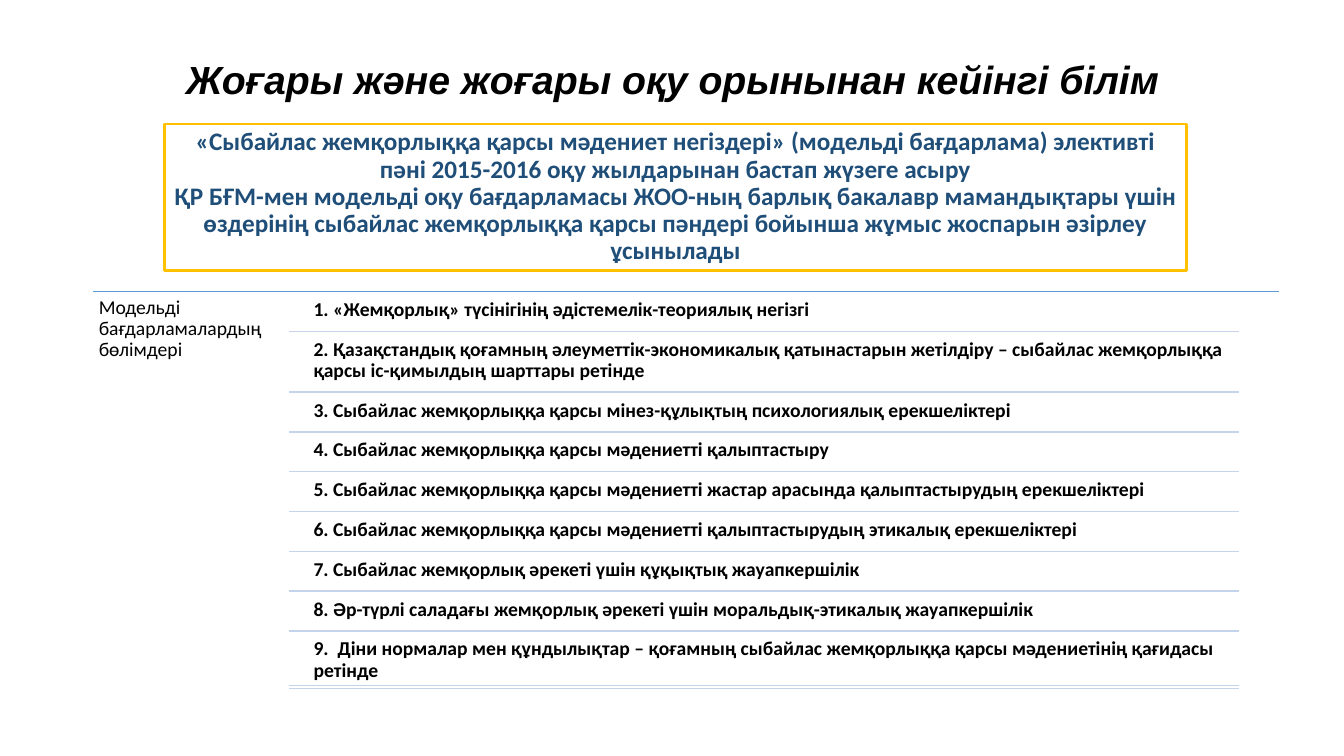
from lxml.etree import SubElement
from pptx import Presentation
from pptx.dml.color import RGBColor
from pptx.enum.shapes import MSO_CONNECTOR, MSO_SHAPE
from pptx.enum.text import MSO_ANCHOR, PP_ALIGN
from pptx.oxml.ns import qn
from pptx.util import Inches, Pt


class Theme:
    black = RGBColor.from_string("000000")
    navy = RGBColor.from_string("1F4E79")
    gold = RGBColor.from_string("FFC000")
    blue = RGBColor.from_string("5B9BD5")
    pale_blue = RGBColor.from_string("C4D5EB")
    heading_font = "Arial"
    body_font = "Calibri"
    title_size = Pt(28)
    summary_size = Pt(18)
    section_size = Pt(14)


TITLE = "Жоғары және жоғары оқу орынынан кейінгі білім"
SUMMARY = [
    "«Сыбайлас жемқорлыққа қарсы мәдениет негіздері» (модельді бағдарлама) элективті "
    "пәні 2015-2016 оқу жылдарынан бастап жүзеге асыру",
    "ҚР БҒМ-мен модельді оқу бағдарламасы ЖОО-ның барлық бакалавр мамандықтары үшін "
    "өздерінің сыбайлас жемқорлыққа қарсы пәндері бойынша жұмыс жоспарын әзірлеу ұсынылады",
]
SECTIONS_LABEL = "Модельді бағдарламалардың бөлімдері"
SECTIONS = [
    "1. «Жемқорлық» түсінігінің әдістемелік-теориялық негізгі",
    "2. Қазақстандық қоғамның әлеуметтік-экономикалық қатынастарын жетілдіру – "
    "сыбайлас жемқорлыққа қарсы іс-қимылдың шарттары ретінде",
    "3. Сыбайлас жемқорлыққа қарсы мінез-құлықтың психологиялық ерекшеліктері",
    "4. Сыбайлас жемқорлыққа қарсы мәдениетті қалыптастыру",
    "5. Сыбайлас жемқорлыққа қарсы мәдениетті жастар арасында қалыптастырудың ерекшеліктері",
    "6. Сыбайлас жемқорлыққа қарсы мәдениетті қалыптастырудың этикалық ерекшеліктері",
    "7. Сыбайлас жемқорлық әрекеті үшін құқықтық жауапкершілік",
    "8. Әр-түрлі саладағы жемқорлық әрекеті үшін моральдық-этикалық жауапкершілік",
    "9.  Діни нормалар мен құндылықтар – қоғамның сыбайлас жемқорлыққа қарсы "
    "мәдениетінің қағидасы ретінде",
]


def write(shape, lines, size, color=Theme.black, font=Theme.body_font, bold=True,
          italic=False, align=PP_ALIGN.LEFT, anchor=MSO_ANCHOR.TOP, inset=0.06):
    """Fill a shape with one paragraph per line, all in the same style."""
    frame = shape.text_frame
    frame.word_wrap = True
    frame.vertical_anchor = anchor
    frame.margin_left = frame.margin_right = Inches(inset)
    frame.margin_top = frame.margin_bottom = Inches(min(inset, 0.06))
    frame.text = "\n".join(lines)
    for paragraph in frame.paragraphs:
        paragraph.alignment = align
        paragraph.line_spacing = 0.9
        paragraph.font.name = font
        paragraph.font.size = size
        paragraph.font.bold = bold
        paragraph.font.italic = italic
        paragraph.font.color.rgb = color


def add_rule(left, right, y, color):
    """Draw a horizontal dividing line."""
    rule = slide.shapes.add_connector(
        MSO_CONNECTOR.STRAIGHT, Inches(left), Inches(y), Inches(right), Inches(y))
    rule.line.color.rgb = color
    rule.line.width = Pt(1)
    SubElement(rule._element.spPr, qn("a:effectLst"))


prs = Presentation()
prs.slide_width = Inches(13.33)
prs.slide_height = Inches(7.5)
slide = prs.slides.add_slide(prs.slide_layouts[6])

# Title and summary
title = slide.shapes.add_textbox(Inches(0.92), Inches(0.4), Inches(11.5), Inches(0.83))
write(title, [TITLE], Theme.title_size, font=Theme.heading_font, italic=True,
      align=PP_ALIGN.CENTER, anchor=MSO_ANCHOR.MIDDLE, inset=0.1)

summary = slide.shapes.add_shape(
    MSO_SHAPE.RECTANGLE, Inches(1.63), Inches(1.23), Inches(10.14), Inches(1.45))
summary.shadow.inherit = False
summary.fill.background()
summary.line.color.rgb = Theme.gold
summary.line.width = Pt(2)
write(summary, SUMMARY, Theme.summary_size, color=Theme.navy,
      align=PP_ALIGN.CENTER, anchor=MSO_ANCHOR.MIDDLE, inset=0.1)

# Programme sections, each closed by a rule
list_top = 2.89
add_rule(0.92, 12.69, list_top, Theme.blue)
sections_label = slide.shapes.add_textbox(
    Inches(0.92), Inches(list_top), Inches(1.96), Inches(4.19))
write(sections_label, [SECTIONS_LABEL], Theme.section_size, bold=False)

gap = 0.02
first_bottom, second_bottom, eighth_bottom, last_bottom = 3.29, 3.89, 6.26, 6.8
row_pitch = (eighth_bottom - second_bottom) / 6
bottoms = [first_bottom, *(second_bottom + i * row_pitch for i in range(7)), last_bottom]
tops = [bottom + gap for bottom in [list_top, *bottoms[:-1]]]

for text, top, bottom in zip(SECTIONS, tops, bottoms):
    section = slide.shapes.add_textbox(
        Inches(3.05), Inches(top), Inches(9.24), Inches(bottom - top))
    write(section, [text], Theme.section_size)
    add_rule(2.87, 12.29, bottom, Theme.pale_blue)
add_rule(2.87, 12.29, 6.83, Theme.pale_blue)

prs.save("out.pptx")
